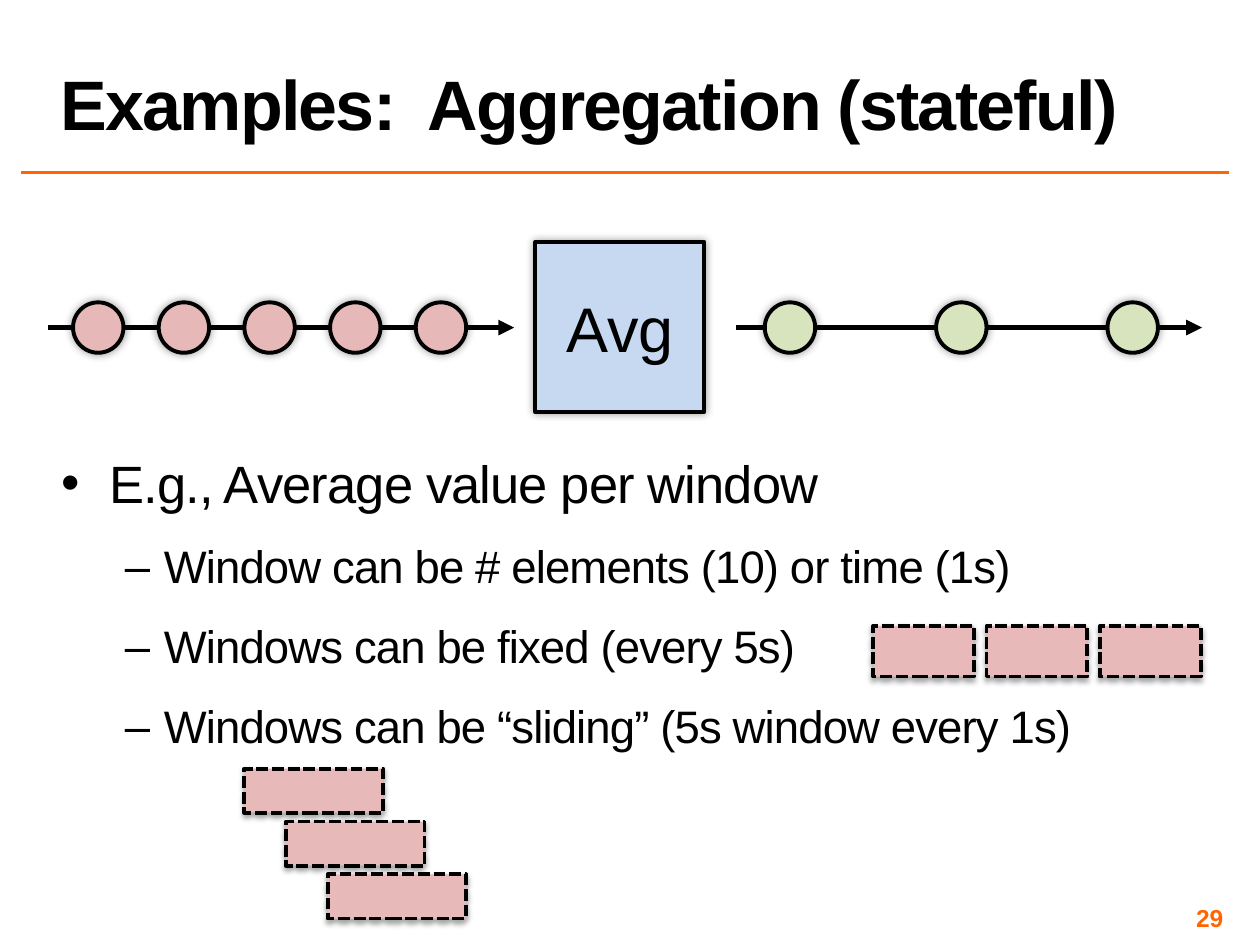
from lxml.etree import SubElement as Sub
from pptx import Presentation
from pptx.dml.color import RGBColor as RGB
from pptx.enum.dml import MSO_LINE as Dash
from pptx.enum.shapes import MSO_CONNECTOR as Conn, MSO_SHAPE as Form
from pptx.enum.text import MSO_ANCHOR as Anchor, MSO_AUTO_SIZE as Auto, PP_ALIGN as Align
from pptx.oxml.ns import qn
from pptx.util import Inches, Pt

HUES = {"ink": "000000", "rule": "FF6600", "box": "C6D9F1",
        "rose": "E6B9B8", "pane": "E7B9B9", "lime": "D7E4BD"}
GLOW = (5, 0, 0, 40)       # blur pt, distance pt, angle, opacity %
DROP = (3.1, 1.8, 90, 35)


class Deck:
    font = "Arial"
    edge = 2.25

    def __init__(self):
        self.prs = Presentation()
        self.prs.slide_width, self.prs.slide_height = Inches(10), Inches(7.5)
        self.slide = self.prs.slides.add_slide(self.prs.slide_layouts[1])

    def hue(self, name):
        return RGB.from_string(HUES[name])

    def place(self, shape, left, top, width, height):
        shape.left, shape.top = Inches(left), Inches(top)
        shape.width, shape.height = Inches(width), Inches(height)

    def style(self, para, size, color="ink", bold=False, track=0):
        for run in para.runs:
            font = run.font
            font.name, font.size, font.bold = self.font, Pt(size), bold
            font.color.rgb = self.hue(color)
            if track:
                run._r.get_or_add_rPr().set("spc", str(int(track * 100)))

    def inset(self, frame, gap):
        frame.margin_left = frame.margin_right = Inches(gap)
        frame.margin_top = frame.margin_bottom = Inches(gap)

    def title(self, text, box):
        shape = self.slide.shapes.title
        self.place(shape, *box)
        frame = shape.text_frame
        frame.text = text
        frame.auto_size, frame.vertical_anchor = Auto.NONE, Anchor.BOTTOM
        para = frame.paragraphs[0]
        para.alignment, para.line_spacing = Align.LEFT, 0.8
        self.style(para, 40, bold=True, track=-1)

    def body(self, items, box):
        shape = self.slide.placeholders[1]
        self.place(shape, *box)
        frame = shape.text_frame
        frame.text = "\n".join(text for _, text in items)
        frame.auto_size = Auto.NONE
        self.inset(frame, 0.04)
        looks = [(30, 1.0, 0.38, 0.38, "•"), (26, 0.95, 0.81, 0.31, "–")]
        for para, (level, _) in zip(frame.paragraphs, items):
            size, lead, left, hang, mark = looks[level]
            para.level, para.line_spacing = level, lead
            para.space_before = para.space_after = Pt(8)
            props = para._p.get_or_add_pPr()
            props.set("marL", str(Inches(left)))
            props.set("indent", str(-Inches(hang)))
            Sub(props, qn("a:buChar"), char=mark)
            self.style(para, size, track=-0.5)

    def line(self, left, right, y, color, width, arrow=False):
        conn = self.slide.shapes.add_connector(
            Conn.STRAIGHT, Inches(left), Inches(y), Inches(right), Inches(y))
        conn.line.color.rgb = self.hue(color)
        conn.line.width = Pt(width)
        if arrow:
            Sub(conn.line._get_or_add_ln(), qn("a:tailEnd"), type="triangle")
        Sub(conn._element.spPr, qn("a:effectLst"))

    def shape(self, form, box, fill, shade=GLOW, dash=None, group=None):
        shapes = (group or self.slide).shapes
        item = shapes.add_shape(form, *map(Inches, box))
        item.fill.solid()
        item.fill.fore_color.rgb = self.hue(fill)
        item.line.color.rgb = self.hue("ink")
        item.line.width = Pt(self.edge)
        if dash:
            item.line.dash_style = dash
        self.shadow(item, *shade)
        return item

    def shadow(self, item, blur, dist, angle, alpha):
        item.shadow.inherit = False
        outer = Sub(item._element.spPr.find(qn("a:effectLst")), qn("a:outerShdw"),
                    blurRad=str(Pt(blur)), dist=str(Pt(dist)),
                    dir=str(angle * 60000), rotWithShape="0")
        color = Sub(outer, qn("a:srgbClr"), val=HUES["ink"])
        Sub(color, qn("a:alpha"), val=str(alpha * 1000))

    def label(self, item, text, size):
        frame = item.text_frame
        frame.text = text
        frame.vertical_anchor = Anchor.MIDDLE
        frame.paragraphs[0].alignment = Align.CENTER
        self.style(frame.paragraphs[0], size)

    def dots(self, left, top, step, count, fill):
        for i in range(count):
            self.shape(Form.OVAL, (left + i * step, top, 0.4, 0.4), fill)

    def panes(self, left, top, width, height, dx, dy=0):
        group = self.slide.shapes.add_group_shape()
        for i in range(3):
            box = (left + i * dx, top + i * dy, width, height)
            self.shape(Form.RECTANGLE, box, "pane", DROP, Dash.SQUARE_DOT, group)

    def number(self, text, box):
        frame = self.slide.shapes.add_textbox(*map(Inches, box)).text_frame
        frame.text = text
        frame.word_wrap, frame.vertical_anchor = True, Anchor.MIDDLE
        self.inset(frame, 0.04)
        frame.paragraphs[0].alignment = Align.RIGHT
        self.style(frame.paragraphs[0], 14, "rule", bold=True)


def main():
    deck = Deck()

    # Heading and rule
    deck.line(0.17, 9.75, 1.37, "rule", 2)
    deck.title("Examples:  Aggregation (stateful)", (0.38, 0.02, 9.37, 1.17))

    # Streams in and out of the operator
    for left in (0.38, 5.84):
        deck.line(left, left + 3.7, 2.6, "ink", 3, arrow=True)
    avg = deck.shape(Form.RECTANGLE, (4.25, 1.92, 1.34, 1.35), "box")
    deck.label(avg, "Avg", 36)
    deck.dots(0.58, 2.4, 0.68, 5, "rose")
    deck.dots(6.07, 2.4, 1.36, 3, "lime")

    # Notes on windows
    deck.body([
        (0, "E.g., Average value per window"),
        (1, "Window can be # elements (10) or time (1s)"),
        (1, "Windows can be fixed (every 5s)"),
        (1, "Windows can be “sliding” (5s window every 1s)"),
    ], (0.45, 3.54, 9.37, 2.61))

    # Fixed and sliding windows
    deck.panes(6.93, 4.97, 0.8, 0.4, 0.9)
    deck.panes(1.94, 6.1, 1.1, 0.35, 0.33, 0.42)

    # Page number
    deck.number("29", (7.42, 7.17, 2.33, 0.23))
    deck.prs.save("out.pptx")


if __name__ == "__main__":
    main()
